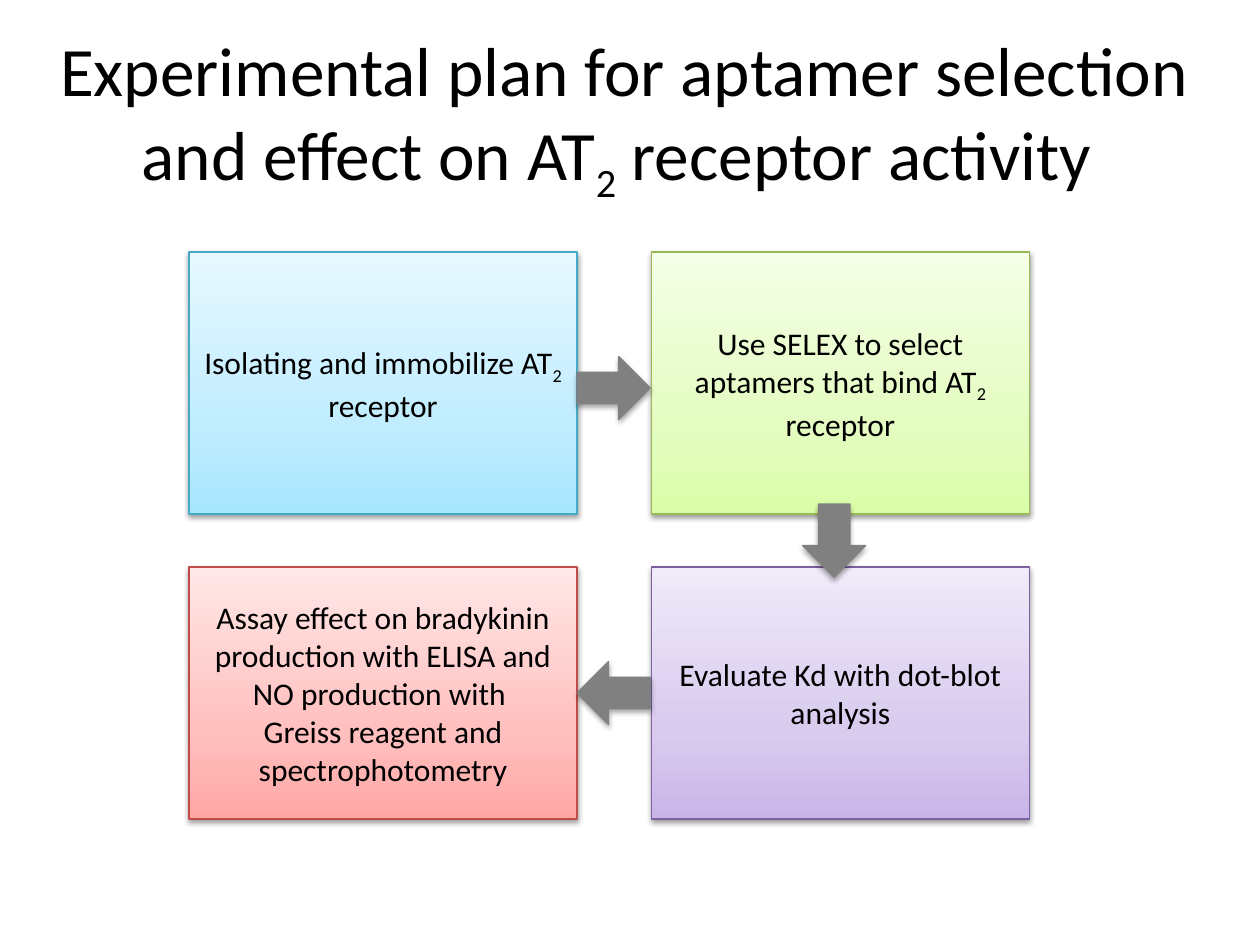
import copy
from dataclasses import dataclass

import pptx
import pptx.dml.color
import pptx.enum.shapes
import pptx.enum.text
import pptx.oxml
import pptx.oxml.ns
import pptx.util
from pptx.dml.color import RGBColor
from pptx.util import Inches

BLACK = RGBColor(0x00, 0x00, 0x00)
GRAY = RGBColor(0x80, 0x80, 0x80)
BLUE_LINE = RGBColor(0x46, 0xAA, 0xC5)
BLUES = (RGBColor(0xA7, 0xE6, 0xFF), RGBColor(0xC1, 0xED, 0xFF), RGBColor(0xE7, 0xF8, 0xFF))
GREEN_LINE = RGBColor(0x98, 0xB9, 0x55)
GREENS = (RGBColor(0xDA, 0xFD, 0xA7), RGBColor(0xE4, 0xFC, 0xC2), RGBColor(0xF5, 0xFF, 0xE7))
RED_LINE = RGBColor(0xBF, 0x4C, 0x48)
REDS = (RGBColor(0xFF, 0xA6, 0xA5), RGBColor(0xFF, 0xC0, 0xBF), RGBColor(0xFF, 0xE7, 0xE7))
PURPLE_LINE = RGBColor(0x7D, 0x60, 0xA0)
PURPLES = (RGBColor(0xC9, 0xB5, 0xE8), RGBColor(0xD8, 0xCB, 0xEE), RGBColor(0xF0, 0xEA, 0xF9))
STOP_POSITIONS = (0, 0.35, 1)
SUBSCRIPT = "2"
LEFT_COLUMN, RIGHT_COLUMN = (1.5, 3.08), (5.17, 3)
TOP_ROW, BOTTOM_ROW = (2, 2.08), (4.5, 2)

Paragraphs = tuple[tuple[str, ...], ...]


@dataclass(frozen=True)
class Step:
    column: tuple[float, float]
    row: tuple[float, float]
    gradient: tuple[RGBColor, ...]
    outline: RGBColor
    paragraphs: Paragraphs


@dataclass(frozen=True)
class Arrow:
    left: float
    top: float
    rotation: int


TITLE: Paragraphs = (
    ("Experimental plan for aptamer selection and effect on AT", SUBSCRIPT, " receptor activity "),
)
STEPS = (
    Step(LEFT_COLUMN, TOP_ROW, BLUES, BLUE_LINE,
         (("Isolating and immobilize AT", SUBSCRIPT), ("receptor",))),
    Step(RIGHT_COLUMN, TOP_ROW, GREENS, GREEN_LINE,
         (("Use SELEX to select aptamers that bind AT", SUBSCRIPT, " receptor"),)),
    Step(LEFT_COLUMN, BOTTOM_ROW, REDS, RED_LINE,
         (("Assay effect on bradykinin production with ELISA and NO production with ",),
          ("Greiss reagent and spectrophotometry",))),
    Step(RIGHT_COLUMN, BOTTOM_ROW, PURPLES, PURPLE_LINE,
         (("Evaluate Kd with dot-blot analysis",),)),
)
ARROWS = (Arrow(4.58, 2.83, 0), Arrow(6.33, 4.04, 90), Arrow(4.58, 5.25, 180))


def write_text(shape, paragraphs: Paragraphs, size: float) -> None:
    frame = shape.text_frame
    frame.word_wrap = True
    frame.vertical_anchor = pptx.enum.text.MSO_ANCHOR.MIDDLE
    for index, pieces in enumerate(paragraphs):
        paragraph = frame.add_paragraph() if index else frame.paragraphs[0]
        paragraph.alignment = pptx.enum.text.PP_ALIGN.CENTER
        for piece in pieces:
            run = paragraph.add_run()
            run.text = piece
            run.font.name = "Calibri"
            run.font.size = pptx.util.Pt(size)
            run.font.color.rgb = BLACK
            if piece == SUBSCRIPT:
                run.font._element.set("baseline", "-25000")


def style_outline(shape, color: RGBColor, shadow_distance: float, shadow_opacity: int) -> None:
    shape.line.color.rgb = color
    shape.line.width = pptx.util.Pt(0.75)
    shape.shadow.inherit = False
    effects = shape._element.spPr.find(pptx.oxml.ns.qn("a:effectLst"))
    effects.append(pptx.oxml.parse_xml(
        f'<a:outerShdw {pptx.oxml.ns.nsdecls("a")} blurRad="{pptx.util.Pt(3.1)}" '
        f'dist="{pptx.util.Pt(shadow_distance)}" dir="5400000" rotWithShape="0">'
        f'<a:srgbClr val="{BLACK}"><a:alpha val="{shadow_opacity * 1000}"/></a:srgbClr>'
        '</a:outerShdw>'))


def fill_gradient(shape, colors: tuple[RGBColor, ...]) -> None:
    shape.fill.gradient()
    shape.fill.gradient_angle = 90
    stop_list = shape._element.spPr.find(
        f'{pptx.oxml.ns.qn("a:gradFill")}/{pptx.oxml.ns.qn("a:gsLst")}')
    stop_list.append(copy.deepcopy(stop_list[-1]))
    for stop, position, color in zip(shape.fill.gradient_stops, STOP_POSITIONS, colors):
        stop.position = position
        stop.color.rgb = color


def draw_step(slide, step: Step) -> None:
    (left, width), (top, height) = step.column, step.row
    shape = slide.shapes.add_shape(
        pptx.enum.shapes.MSO_SHAPE.RECTANGLE,
        Inches(left), Inches(top), Inches(width), Inches(height))
    fill_gradient(shape, step.gradient)
    style_outline(shape, step.outline, 1.6, 38)
    write_text(shape, step.paragraphs, 18)


def draw_arrow(slide, arrow: Arrow) -> None:
    shape = slide.shapes.add_shape(
        pptx.enum.shapes.MSO_SHAPE.RIGHT_ARROW,
        Inches(arrow.left), Inches(arrow.top), Inches(0.58), Inches(0.5))
    shape.rotation = arrow.rotation
    shape.fill.solid()
    shape.fill.fore_color.rgb = GRAY
    style_outline(shape, GRAY, 1.8, 35)


def main() -> None:
    """Build the slide showing the aptamer selection plan."""
    presentation = pptx.Presentation()
    presentation.slide_width = Inches(10)
    presentation.slide_height = Inches(7.5)
    slide = presentation.slides.add_slide(presentation.slide_layouts[6])
    title = slide.shapes.add_textbox(Inches(0.33), Inches(0.3), Inches(9.25), Inches(1.25))
    write_text(title, TITLE, 39.6)
    for step in STEPS:
        draw_step(slide, step)
    for arrow in ARROWS:
        draw_arrow(slide, arrow)
    presentation.save("out.pptx")


if __name__ == "__main__":
    main()
